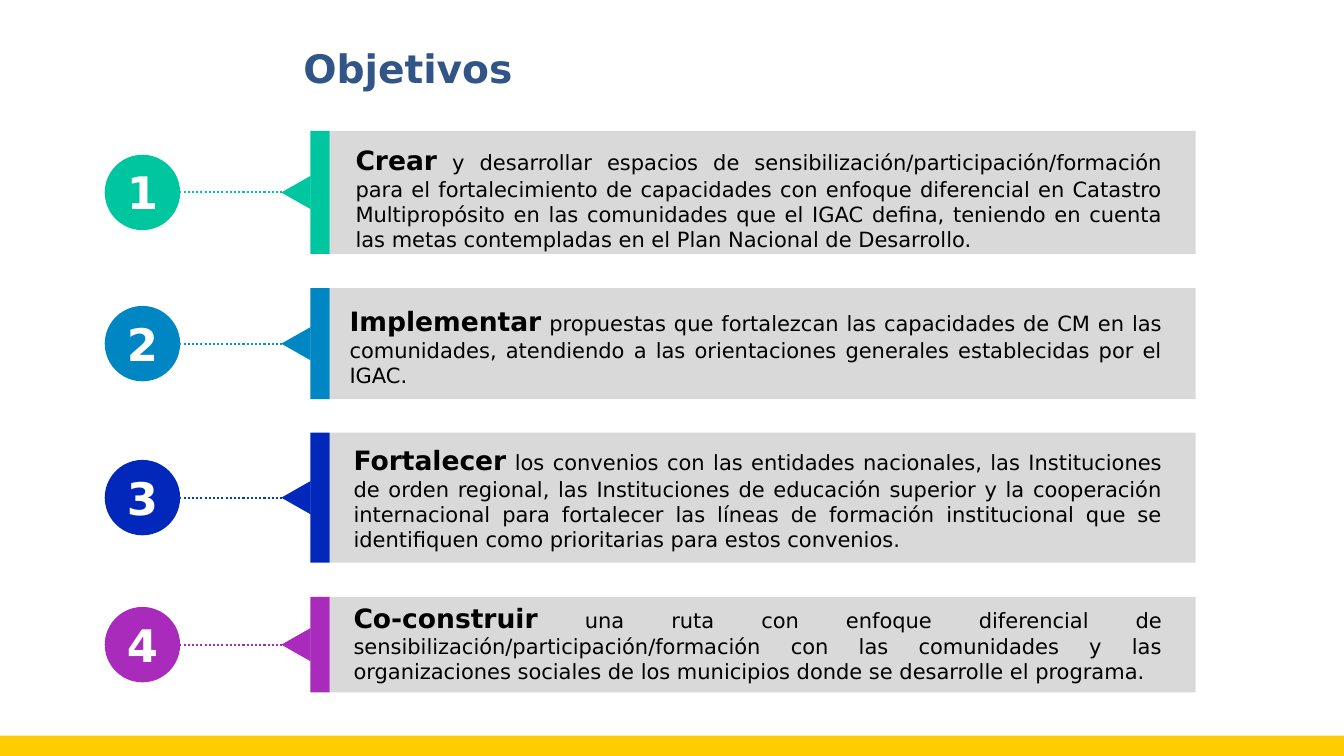
"""Builds the slide of four numbered objectives."""
from dataclasses import dataclass

from lxml import etree
from pptx import Presentation
from pptx import util as u
from pptx.dml.color import RGBColor
from pptx.enum import dml, shapes, text
from pptx.oxml.ns import qn
from pptx.util import Cm

FONT = "DejaVu Sans"
WIDTH, HEIGHT = 33.87, 19.05
COLORS = {
    "footer": "FFCC01", "title": "315587", "panel": "D9D9D9",
    "body": "000000", "number": "FFFFFF",
    "green": "00C6A0", "blue": "0087C3", "sky": "009BCC",
    "navy": "0128BB", "cobalt": "0040BA", "purple": "A92BBC",
}
FORMATS = {
    "title": {"size": u.Pt(28), "bold": True},
    "number": {"size": u.Pt(32), "bold": True},
    "verb": {"size": u.Pt(19), "bold": True},
    "detail": {"size": u.Pt(15), "bold": False},
}
FRAME = {
    "word_wrap": True,
    "auto_size": text.MSO_AUTO_SIZE.SHAPE_TO_FIT_TEXT,
    "vertical_anchor": text.MSO_ANCHOR.TOP,
}
PANEL_LEFT, PANEL_WIDTH = 8.31, 21.82
STRIPE_LEFT, STRIPE_WIDTH = 7.82, 0.49
POINTER_LEFT, POINTER_WIDTH, POINTER_HEIGHT = 7.04, 0.84, 0.74
CIRCLE_LEFT, CIRCLE_SIZE = 2.64, 1.9
NUMBER_HEIGHT = 1.63
DOTS_START, DOTS_END = 4.52, 7.1
TEXT_RIGHT = 29.55


@dataclass
class Objective:
    """One row: panel place, text place, colours and wording."""
    top: float
    height: float
    text_left: float
    text_top: float
    text_height: float
    color: str
    dots: str
    verb: str
    detail: str


OBJECTIVES = [
    Objective(3.3, 3.1, 8.71, 3.51, 3, "green", "green", "Crear",
              " y desarrollar espacios de sensibilización/participación/formación"
              " para el fortalecimiento de capacidades con enfoque diferencial en"
              " Catastro Multipropósito en las comunidades que el IGAC defina,"
              " teniendo en cuenta las metas contempladas en el Plan Nacional de"
              " Desarrollo."),
    Objective(7.26, 2.8, 8.56, 7.57, 2.36, "blue", "sky", "Implementar",
              " propuestas que fortalezcan las capacidades de CM en las comunidades,"
              " atendiendo a las orientaciones generales establecidas por el IGAC."),
    Objective(10.9, 3.28, 8.66, 11.07, 3, "navy", "cobalt", "Fortalecer",
              " los convenios con las entidades nacionales, las Instituciones de"
              " orden regional, las Instituciones de educación superior y la"
              " cooperación internacional para fortalecer las líneas de formación"
              " institucional que se identifiquen como prioritarias para estos"
              " convenios."),
    Objective(15.04, 2.41, 8.66, 15.04, 2.36, "purple", "purple", "Co-construir",
              " una ruta con enfoque diferencial de"
              " sensibilización/participación/formación con las comunidades y las"
              " organizaciones sociales de los municipios donde se desarrolle el"
              " programa."),
]


def rgb(color: str) -> RGBColor:
    """Return a palette colour."""
    return RGBColor.from_string(COLORS[color])


def add_block(slide, kind, left: float, top: float, width: float,
              height: float, color: str, rotation: float = 0) -> None:
    """Draw a filled shape without outline."""
    block = slide.shapes.add_shape(kind, Cm(left), Cm(top), Cm(width), Cm(height))
    block.rotation = rotation
    block.shadow.inherit = False
    block.fill.solid()
    block.fill.fore_color.rgb = rgb(color)
    block.line.fill.background()


def add_dots(slide, axis: float, color: str) -> None:
    """Draw the dotted line from a circle to its pointer."""
    dots = slide.shapes.add_connector(
        shapes.MSO_CONNECTOR.STRAIGHT,
        Cm(DOTS_START), Cm(axis), Cm(DOTS_END), Cm(axis))
    dots.line.color.rgb = rgb(color)
    dots.line.width = u.Pt(1.5)
    dots.line.dash_style = dml.MSO_LINE.ROUND_DOT
    etree.SubElement(dots._element.spPr, qn("a:effectLst"))


def add_run(paragraph, wording: str, style: str, color: str) -> None:
    """Append a formatted run."""
    run = paragraph.add_run()
    run.text = wording
    run.font.name = FONT
    run.font.color.rgb = rgb(color)
    for name, value in FORMATS[style].items():
        setattr(run.font, name, value)


def add_paragraph_box(slide, left: float, top: float, width: float,
                      height: float, alignment):
    """Add a wrapping text box and return its paragraph."""
    frame = slide.shapes.add_textbox(
        Cm(left), Cm(top), Cm(width), Cm(height)).text_frame
    for name, value in FRAME.items():
        setattr(frame, name, value)
    paragraph = frame.paragraphs[0]
    paragraph.alignment = alignment
    return paragraph


def add_title(slide, wording: str) -> None:
    """Fill and place the title placeholder."""
    title = slide.shapes.title
    place = {"left": 7.39, "top": 0.99, "width": 5.84, "height": 1.45}
    for name, value in place.items():
        setattr(title, name, Cm(value))
    for name, value in {**FRAME, "word_wrap": False}.items():
        setattr(title.text_frame, name, value)
    paragraph = title.text_frame.paragraphs[0]
    paragraph.alignment = text.PP_ALIGN.LEFT
    add_run(paragraph, wording, "title", "title")


def add_objective(slide, number: int, row: Objective) -> None:
    """Draw one objective, centred on the axis of its panel."""
    kinds = shapes.MSO_SHAPE
    axis = row.top + row.height / 2
    add_block(slide, kinds.RECTANGLE, PANEL_LEFT, row.top, PANEL_WIDTH,
              row.height, "panel")
    add_block(slide, kinds.RECTANGLE, STRIPE_LEFT, row.top, STRIPE_WIDTH,
              row.height, row.color)
    add_block(slide, kinds.ISOSCELES_TRIANGLE, POINTER_LEFT,
              axis - POINTER_HEIGHT / 2, POINTER_WIDTH, POINTER_HEIGHT,
              row.color, 270)
    add_block(slide, kinds.OVAL, CIRCLE_LEFT, axis - CIRCLE_SIZE / 2,
              CIRCLE_SIZE, CIRCLE_SIZE, row.color)
    add_dots(slide, axis, row.dots)
    numeral = add_paragraph_box(slide, CIRCLE_LEFT, axis - NUMBER_HEIGHT / 2,
                                CIRCLE_SIZE, NUMBER_HEIGHT,
                                text.PP_ALIGN.CENTER)
    add_run(numeral, str(number), "number", "number")
    statement = add_paragraph_box(slide, row.text_left, row.text_top,
                                  TEXT_RIGHT - row.text_left, row.text_height,
                                  text.PP_ALIGN.JUSTIFY)
    add_run(statement, row.verb, "verb", "body")
    add_run(statement, row.detail, "detail", "body")


def main() -> None:
    """Build and save the slide."""
    deck = Presentation()
    deck.slide_width, deck.slide_height = Cm(WIDTH), Cm(HEIGHT)
    slide = deck.slides.add_slide(deck.slide_layouts.get_by_name("Title Only"))
    add_title(slide, "Objetivos")
    add_block(slide, shapes.MSO_SHAPE.RECTANGLE, 0, 18.54, WIDTH,
              HEIGHT - 18.54, "footer")
    for number, row in enumerate(OBJECTIVES, start=1):
        add_objective(slide, number, row)
    deck.save("out.pptx")


if __name__ == "__main__":
    main()
